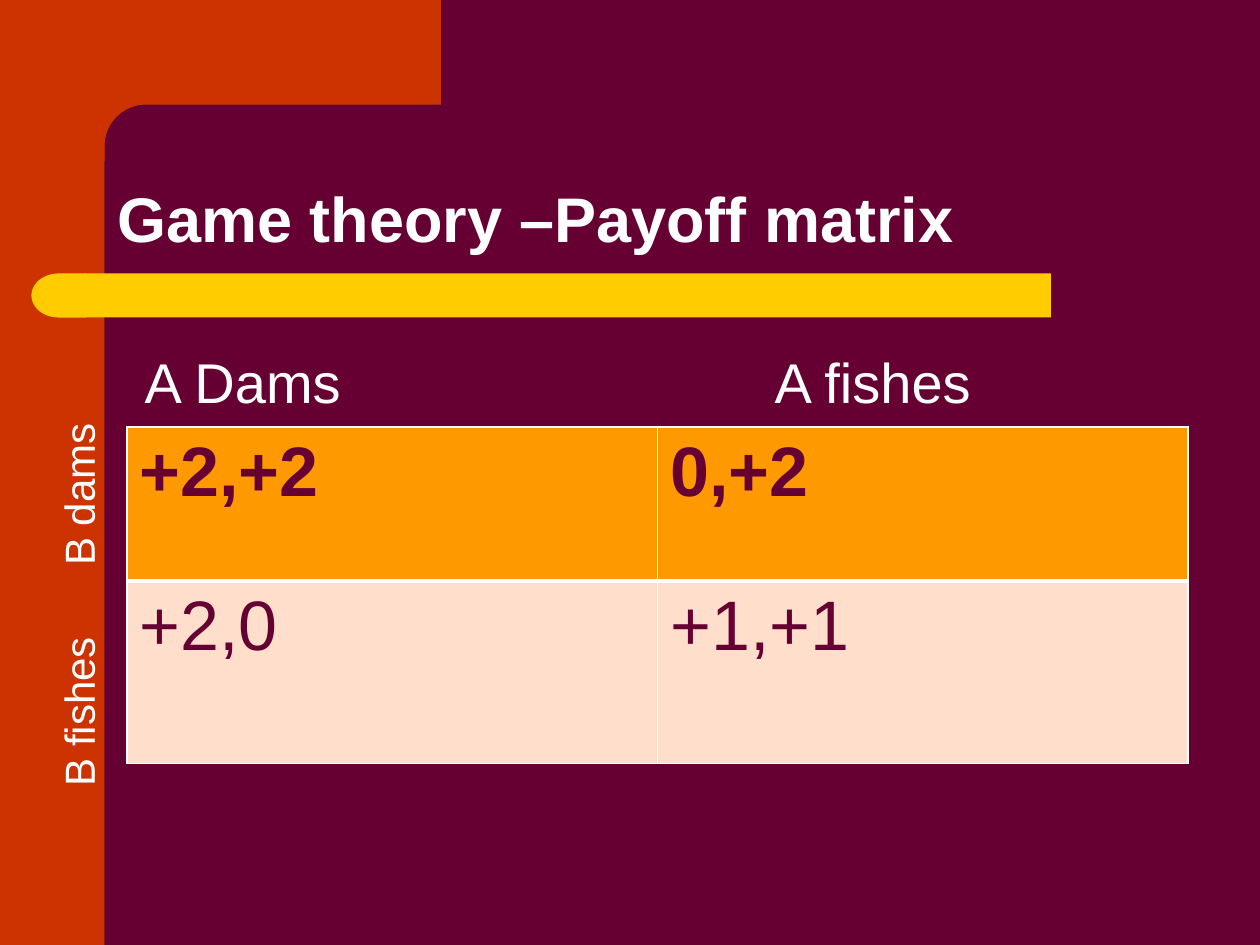
from math import cos, pi, sin

from lxml.etree import SubElement
from pptx import Presentation
from pptx.dml.color import RGBColor
from pptx.enum.shapes import MSO_SHAPE as Shape
from pptx.enum.text import MSO_ANCHOR as Anchor, MSO_AUTO_SIZE as Fit, PP_ALIGN as Align
from pptx.oxml.ns import qn
from pptx.util import Inches, Pt

WINE, RED, GOLD, WHITE = "660033", "CC3300", "FFCC00", "FFFFFF"
ORANGE, PEACH = "FF9900", "FFDECC"
SIDE = 0.83  # width of the red band, also the height of its top arm
PAYOFFS = [["+2,+2", "0,+2"], ["+2,0", "+1,+1"]]


def paint(fill, color):
    fill.solid()
    fill.fore_color.rgb = RGBColor.from_string(color)


def style(para, size, color, bold=False):
    font = para.font
    font.name, font.size, font.bold = "Arial", Pt(size), bold
    font.color.rgb = RGBColor.from_string(color)
    para.alignment = Align.LEFT


def place(shape, box):
    shape.left, shape.top, shape.width, shape.height = map(Inches, box)


def finish(shape, color):
    paint(shape.fill, color)
    shape.line.fill.background()
    shape.shadow.inherit = False


def add_block(slide, kind, box, color):
    shape = slide.shapes.add_shape(kind, *map(Inches, box))
    finish(shape, color)
    return shape


def add_corner(slide):
    """Red top arm, joined to the side band by a rounded inner corner."""
    right, rad, steps = 3.5, 0.33, 16
    mid = SIDE + rad
    angles = [pi / 2 * i / steps for i in range(steps + 1)]
    arc = [(mid - rad * sin(a), mid - rad * cos(a)) for a in angles]
    points = [(right, SIDE), *arc, (SIDE, 1.28), (0.5, 1.28), (0.5, 0)]
    path = slide.shapes.build_freeform(Inches(right), 0)
    path.add_line_segments([(Inches(x), Inches(y)) for x, y in points])
    finish(path.convert_to_shape(), RED)


def add_title(slide, text):
    title = slide.shapes.title
    place(title, (SIDE, SIDE, 8.67, 1.25))
    frame = title.text_frame
    frame.text = text
    frame.auto_size, frame.vertical_anchor = Fit.NONE, Anchor.BOTTOM
    para = frame.paragraphs[0]
    para.line_spacing = 0.9
    style(para, 36, WHITE, True)


def add_labels(slide, box, names, size, stop, turned=False):
    """Row of labels parted by a tab stop, given in inches."""
    frame = slide.shapes.add_textbox(*map(Inches, box)).text_frame
    frame.word_wrap = True
    frame.text = "\t".join(names)
    para = frame.paragraphs[0]
    style(para, size, WHITE)
    tabs = para._p.pPr.makeelement(qn("a:tabLst"))
    SubElement(tabs, qn("a:tab"), pos=str(Inches(stop)), algn="l")
    para._p.pPr.insert(0, tabs)
    if turned:
        frame._txBody.bodyPr.set("vert", "vert270")


def add_border(cell, side, width):
    props = cell._tc.get_or_add_tcPr()
    line = SubElement(props, qn("a:ln" + side), w=str(Pt(width)))
    fill = SubElement(line, qn("a:solidFill"))
    SubElement(fill, qn("a:srgbClr"), val=WHITE)


def add_matrix(slide, box):
    table = slide.shapes.add_table(2, 2, *map(Inches, box)).table
    for row, high in zip(table.rows, (1.22, 1.45)):
        row.height = Inches(high)
    for r, values in enumerate(PAYOFFS):
        head = r == 0
        for c, value in enumerate(values):
            cell = table.cell(r, c)
            cell.text = value
            style(cell.text_frame.paragraphs[0], 40, WINE, head)
            widths = (1, 1, 1, 3) if head else (1, 1, 3, 1)
            for side, width in zip("LRTB", widths):
                add_border(cell, side, width)
            paint(cell.fill, ORANGE if head else PEACH)


def main():
    deck = Presentation()
    deck.slide_width, deck.slide_height = Inches(10), Inches(7.5)
    slide = deck.slides.add_slide(deck.slide_layouts[5])
    paint(slide.background.fill, WINE)

    add_block(slide, Shape.RECTANGLE, (0, 0, SIDE, 7.5), RED)
    add_corner(slide)
    add_block(slide, Shape.RECTANGLE, (0.67, 2.17, 7.67, 0.35), GOLD)
    cap = add_block(slide, Shape.FLOWCHART_DELAY, (0.25, 2.17, 0.43, 0.35), GOLD)
    cap._element.spPr.xfrm.set("flipH", "1")

    add_title(slide, "Game theory –Payoff matrix")
    add_matrix(slide, (1.01, 3.39, 8.42, 2.67))
    add_labels(slide, (1.05, 2.71, 8.27, 0.64), ["A Dams", "A fishes"], 32, 5)
    add_labels(slide, (0.37, 3.07, 0.61, 3.27), ["B fishes", "B dams"], 24, 1.75, True)
    deck.save("out.pptx")


if __name__ == "__main__":
    main()
